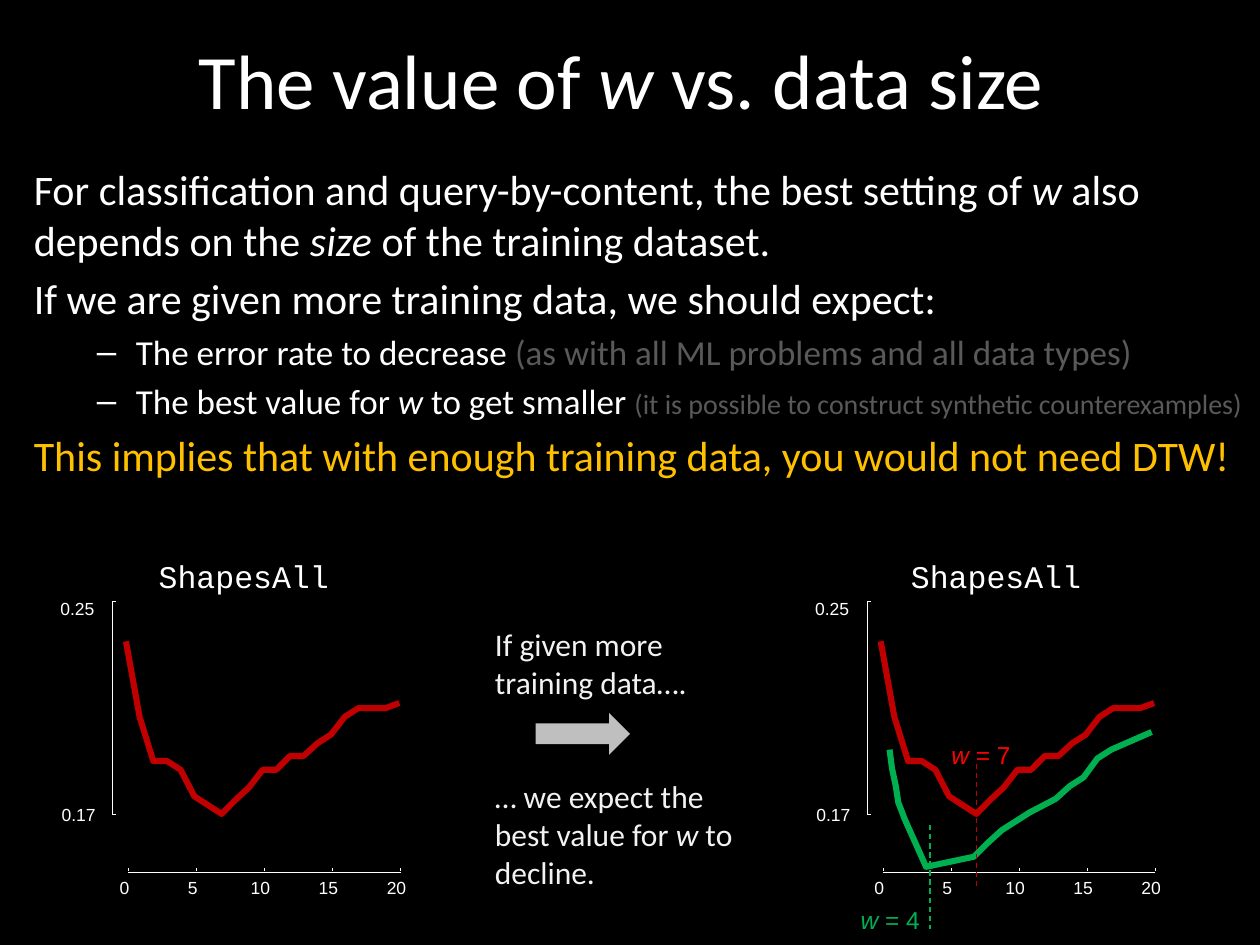
from lxml import etree
from pptx import Presentation
from pptx.dml.color import RGBColor
from pptx.enum.dml import MSO_LINE
from pptx.enum.shapes import MSO_CONNECTOR, MSO_SHAPE
from pptx.enum.text import MSO_ANCHOR, MSO_AUTO_SIZE, PP_ALIGN
from pptx.oxml.ns import qn
from pptx.util import Inches, Pt

BLACK = RGBColor(0x00, 0x00, 0x00)
WHITE = RGBColor(0xFF, 0xFF, 0xFF)
OFF_WHITE = RGBColor(0xF2, 0xF2, 0xF2)
SILVER = RGBColor(0xBF, 0xBF, 0xBF)
GREY = RGBColor(0x59, 0x59, 0x59)
GOLD = RGBColor(0xFF, 0xC0, 0x00)
DARK_RED = RGBColor(0xC0, 0x00, 0x00)
RED = RGBColor(0xFF, 0x00, 0x00)
GREEN = RGBColor(0x00, 0xB0, 0x50)

ITALIC = {"italic": True}
NO_INSETS = {"margin_left": 0, "margin_top": 0, "margin_right": 0, "margin_bottom": 0}

# Heights of the error rate for w = 0 to 20, from the top of a plot
ERROR_STEP = 0.1085
ERROR_YS = [0.67, 1.27, 1.62, 1.62, 1.69, 1.9, 1.97, 2.04, 1.93, 1.83, 1.69,
            1.69, 1.58, 1.58, 1.48, 1.41, 1.27, 1.2, 1.2, 1.2, 1.16]
# Points of the error rate with more data, from the corner of a plot
MORE_DATA_POINTS = [
    (0.59, 1.53), (0.61, 1.68), (0.64, 1.82), (0.66, 1.95), (0.71, 2.08),
    (0.88, 2.46), (1.26, 2.38), (1.37, 2.27), (1.48, 2.17), (1.7, 2.03),
    (1.91, 1.92), (2.02, 1.82), (2.13, 1.75), (2.24, 1.6), (2.35, 1.53), (2.67, 1.39)]


def set_attributes(target, values):
    for name, value in values.items():
        setattr(target, name, value)


def add_runs(paragraph, segments, size, color, font):
    """Each segment is plain text or a (text, format) pair."""
    for segment in segments:
        text, extra = (segment, {}) if isinstance(segment, str) else segment
        run = paragraph.add_run()
        run.text = text
        values = {"name": font, "size": Pt(size), **extra}
        run.font.color.rgb = values.pop("color", color)
        set_attributes(run.font, values)


def add_text(shapes, box, paragraphs, size, color, font, **frame_values):
    label = shapes.add_textbox(*map(Inches, box))
    frame = label.text_frame
    set_attributes(frame, {"word_wrap": True, **frame_values})
    for index, segments in enumerate(paragraphs):
        paragraph = frame.paragraphs[0] if index == 0 else frame.add_paragraph()
        add_runs(paragraph, segments, size, color, font)
    return frame


def add_line(shapes, start, end, color=WHITE, width=0.38, dash=None):
    line = shapes.add_connector(MSO_CONNECTOR.STRAIGHT, *map(Inches, start + end))
    line.line.color.rgb = color
    set_attributes(line.line, {"width": Pt(width), "dash_style": dash})
    etree.SubElement(line._element.spPr, qn("a:effectLst"))


def add_curve(shapes, points, color):
    corners = [(Inches(x), Inches(y)) for x, y in points]
    builder = shapes.build_freeform(*corners[0])
    builder.add_line_segments(corners[1:], close=False)
    curve = builder.convert_to_shape()
    curve.shadow.inherit = False
    curve.fill.background()
    curve.line.color.rgb = color
    curve.line.width = Pt(3.5)


def add_title(slide, box):
    frame = add_text(slide.shapes, box, [["The value of ", ("w", ITALIC), " vs. data size "]],
                     44, WHITE, "Calibri", vertical_anchor=MSO_ANCHOR.MIDDLE)
    frame.paragraphs[0].alignment = PP_ALIGN.CENTER


def add_body(slide, box):
    point = {"size": Pt(20)}
    aside = {"size": Pt(20), "color": GREY}
    frame = add_text(slide.shapes, box, [
        ["For classification and query-by-content, the best setting of ", ("w", ITALIC),
         " also depends on the ", ("size", ITALIC), " of the training dataset."],
        ["If we are given more training data, we should expect:"],
        [("The error rate to decrease ", point),
         ("(as with all ML problems and all data types)", aside)],
        [("The best value for ", point), ("w", {**point, **ITALIC}),
         (" to get smaller ", point),
         ("(it is possible to construct synthetic counterexamples)",
          {**aside, "size": Pt(16)})],
        [("This implies that with enough training data, you would not need DTW!",
          {"color": GOLD})],
    ], 24, WHITE, "Calibri")
    for paragraph in frame.paragraphs:
        paragraph.space_before = Pt(4.8)
    # Dashes on the two expectations
    for paragraph in frame.paragraphs[2:4]:
        set_attributes(paragraph, {"level": 1, "space_before": Pt(4)})
        properties = paragraph._p.get_or_add_pPr()
        properties.set("marL", str(Inches(0.81)))
        properties.set("indent", str(Inches(-0.31)))
        etree.SubElement(properties, qn("a:buFont"), typeface="Arial")
        etree.SubElement(properties, qn("a:buChar"), char="–")


def add_plot(slide, left, top, name_offset):
    shapes = slide.shapes.add_group_shape().shapes
    axis_x, axis_y = left + 0.41, top + 2.5
    tick_gap = 0.54

    # Error axis with its two end marks
    add_line(shapes, (axis_x, top + 2.04), (axis_x, top + 0.35))
    for value, x, tick_y, label_y in (("0.25", 0, 0.35, 0.33), ("0.17", 0.01, 2.04, 1.96)):
        add_line(shapes, (axis_x, top + tick_y), (axis_x + 0.03, top + tick_y))
        add_text(shapes, (left + x, top + label_y, 0.27, 0.17), [[value]], 10, WHITE,
                 "Arial", **{**NO_INSETS, "word_wrap": False})

    # Axis of w
    start = left + 0.54
    add_line(shapes, (start, axis_y), (start + 4 * tick_gap, axis_y))
    for index in range(5):
        x = start + index * tick_gap
        add_line(shapes, (x, axis_y - 0.01), (x, axis_y - 0.03))
        value = str(5 * index)
        width = 0.08 * len(value)
        add_text(shapes, (x - 0.03 - width / 2, top + 2.54, width, 0.17), [[value]], 10,
                 WHITE, "Arial", **{**NO_INSETS, "word_wrap": False})

    # Error curve and name of the dataset
    add_curve(shapes, [(left + 0.52 + i * ERROR_STEP, top + y)
                       for i, y in enumerate(ERROR_YS)], DARK_RED)
    add_text(shapes, (left + name_offset, top, 1.84, 0.3), [["ShapesAll"]], 18, WHITE,
             "Courier New", **NO_INSETS)


def add_best_values(slide, left, top):
    """Curve for more data, and the best w of either curve."""
    add_curve(slide.shapes, [(left + x, top + y) for x, y in MORE_DATA_POINTS], GREEN)
    for value, x, y, end_y, line_color, label_x, label_y, label_color in (
            ("= 7", 1.28, 1.64, 2.62, DARK_RED, 1.08, 1.45, RED),
            ("= 4", 0.91, 2.13, 2.95, GREEN, 0.36, 2.76, GREEN)):
        add_line(slide.shapes, (left + x, top + y), (left + x, top + end_y),
                 line_color, 0.75, MSO_LINE.DASH)
        add_text(slide.shapes, (left + label_x, top + label_y, 0.55, 0.24),
                 [[("w ", ITALIC), value]], 14, label_color, "Arial", **NO_INSETS)


def add_transition(slide, left, top, width, height):
    frame = add_text(slide.shapes, (left, top, width, height), [
        ["If given more training data…."],
        ["… we expect the best value for ", ("w", ITALIC), " to decline."],
    ], 18, OFF_WHITE, "Calibri", auto_size=MSO_AUTO_SIZE.SHAPE_TO_FIT_TEXT)
    frame.paragraphs[1].space_before = Pt(44)
    arrow = slide.shapes.add_shape(
        MSO_SHAPE.RIGHT_ARROW, *map(Inches, (left + 0.42, top + 0.75, 0.75, 0.33)))
    arrow.shadow.inherit = False
    arrow.fill.solid()
    arrow.fill.fore_color.rgb = SILVER
    arrow.line.fill.background()


def main():
    deck = Presentation()
    set_attributes(deck, {"slide_width": Inches(10), "slide_height": Inches(7.5)})
    slide = deck.slides.add_slide(deck.slide_layouts[6])
    slide.background.fill.solid()
    slide.background.fill.fore_color.rgb = BLACK

    add_title(slide, (0.5, 0, 9, 1.25))
    add_body(slide, (0.17, 1.25, 9.83, 4.95))
    add_plot(slide, 0.48, 4.42, 0.78)
    add_plot(slide, 6.47, 4.42, 0.76)
    add_transition(slide, 3.83, 4.91, 2.13, 2.22)
    add_best_values(slide, 6.47, 4.42)
    deck.save("out.pptx")


if __name__ == "__main__":
    main()
